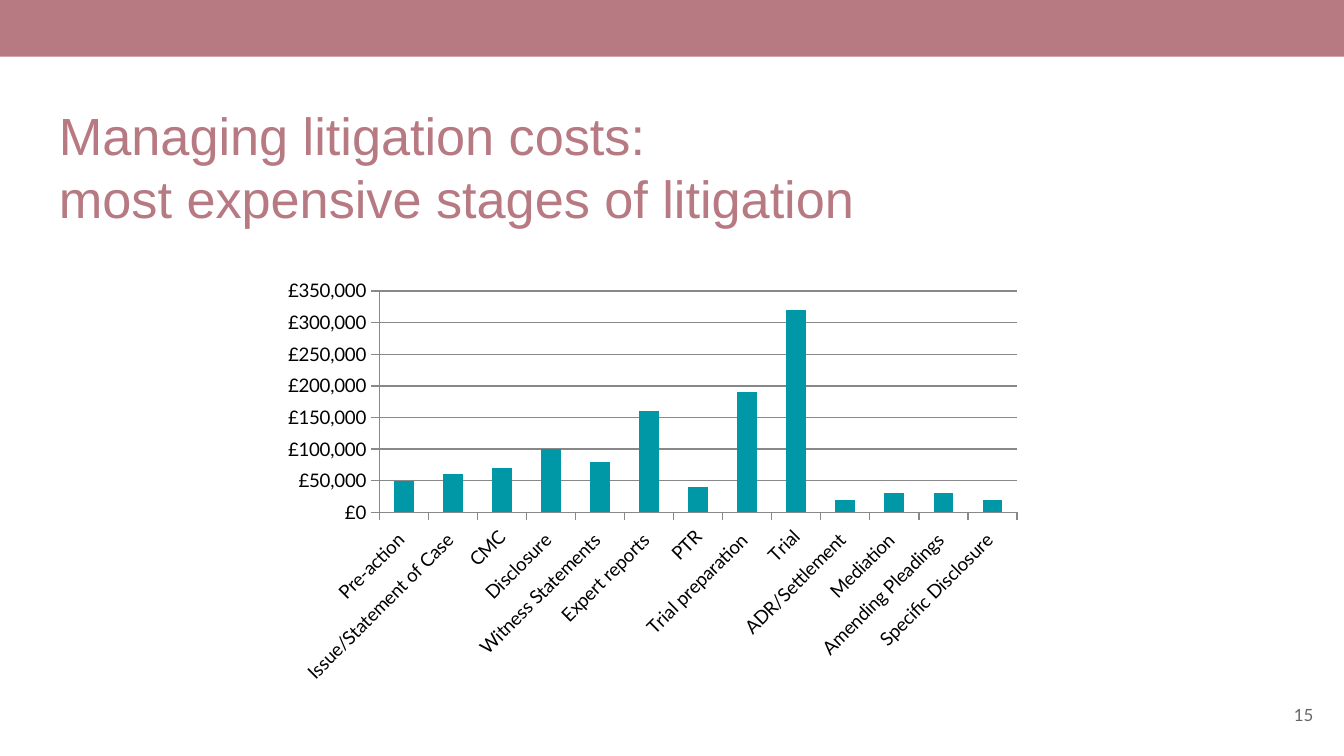
from pptx import Presentation
from pptx.chart.data import CategoryChartData
from pptx.dml.color import RGBColor
from pptx.enum.chart import XL_CHART_TYPE, XL_TICK_MARK
from pptx.enum.shapes import MSO_SHAPE
from pptx.enum.text import MSO_ANCHOR, PP_ALIGN
from pptx.util import Inches, Pt

WIDE = 10
HIGH = WIDE * 9 / 16
ROSE, TEAL, GREY, RULE, BLACK = "B77982", "0097A7", "666666", "888888", "000000"
COSTS = {
    "Pre-action ": 50000,
    "Issue/Statement of Case ": 60000,
    "CMC": 70000,
    "Disclosure ": 100000,
    "Witness Statements ": 80000,
    "Expert reports ": 160000,
    "PTR": 40000,
    "Trial preparation ": 190000,
    "Trial": 320000,
    "ADR/Settlement ": 20000,
    "Mediation ": 30000,
    "Amending Pleadings ": 30000,
    "Specific Disclosure ": 20000,
}


def hue(code):
    """Turn a hex string into a colour."""
    return RGBColor.from_string(code)


def area(left, top, width, height):
    """Turn percentages of the slide into a position and size."""
    return [Inches(part * size / 100) for part, size in
            ((left, WIDE), (top, HIGH), (width, WIDE), (height, HIGH))]


def style(font, name, size, code):
    """Set the face, size and colour of a font."""
    font.name, font.size = name, Pt(size)
    font.color.rgb = hue(code)


def add_band(slide, box):
    """Draw the band along the top edge."""
    band = slide.shapes.add_shape(MSO_SHAPE.RECTANGLE, *box)
    band.shadow.inherit = False
    band.fill.solid()
    band.fill.fore_color.rgb = hue(ROSE)
    band.line.fill.background()


def add_text(slide, box, text, name, size, code, align=PP_ALIGN.LEFT,
             anchor=MSO_ANCHOR.TOP):
    """Add a wrapped text box with even insets."""
    frame = slide.shapes.add_textbox(*box).text_frame
    frame.word_wrap = True
    frame.vertical_anchor = anchor
    frame.margin_left = frame.margin_right = Inches(0.1)
    frame.margin_top = frame.margin_bottom = Inches(0.1)
    frame.text = text
    for para in frame.paragraphs:
        para.alignment = align
        for run in para.runs:
            style(run.font, name, size, code)


def rule(line):
    """Style an axis line or gridline."""
    line.color.rgb = hue(RULE)
    line.width = Pt(0.75)


def add_chart(slide, box, costs):
    """Add the column chart of cost per stage."""
    data = CategoryChartData()
    data.categories = list(costs)
    data.add_series("Series 1", list(costs.values()))
    chart = slide.shapes.add_chart(
        XL_CHART_TYPE.COLUMN_CLUSTERED, *box, data).chart
    chart.has_legend = chart.has_title = False
    style(chart.font, "Arial", 10, BLACK)

    plot = chart.plots[0]
    plot.gap_width, plot.vary_by_categories = 150, False
    fill = plot.series[0].format.fill
    fill.solid()
    fill.fore_color.rgb = hue(TEAL)

    stage, money = chart.category_axis, chart.value_axis
    for axis in (stage, money):
        axis.major_tick_mark = XL_TICK_MARK.OUTSIDE
        axis.minor_tick_mark = XL_TICK_MARK.NONE
        style(axis.tick_labels.font, "Lato", 10, BLACK)
        rule(axis.format.line)
    stage.has_major_gridlines = False
    stage._element.txPr.bodyPr.set("rot", "-2700000")
    money.minimum_scale, money.maximum_scale = 0, 350000
    money.major_unit = 50000
    money.tick_labels.number_format = '"£"#,##0'
    money.tick_labels.number_format_is_linked = False
    money.has_major_gridlines = True
    rule(money.major_gridlines.format.line)


def main():
    """Build the slide and save it."""
    deck = Presentation()
    deck.slide_width, deck.slide_height = Inches(WIDE), Inches(HIGH)
    slide = deck.slides.add_slide(deck.slide_layouts[6])
    add_band(slide, area(0, 0, 100, 7.5))
    add_text(slide, area(92.7, 90.67, 6, 7.65), "15", "Lato", 9, GREY,
             PP_ALIGN.RIGHT, MSO_ANCHOR.MIDDLE)
    add_text(slide, area(3.4, 11.9, 91.2, 22.93),
             "Managing litigation costs:\vmost expensive stages of litigation",
             "Arial", 28, ROSE)
    add_chart(slide, area(20.3, 35.9, 56.5, 55.65), COSTS)
    deck.save("out.pptx")


if __name__ == "__main__":
    main()
